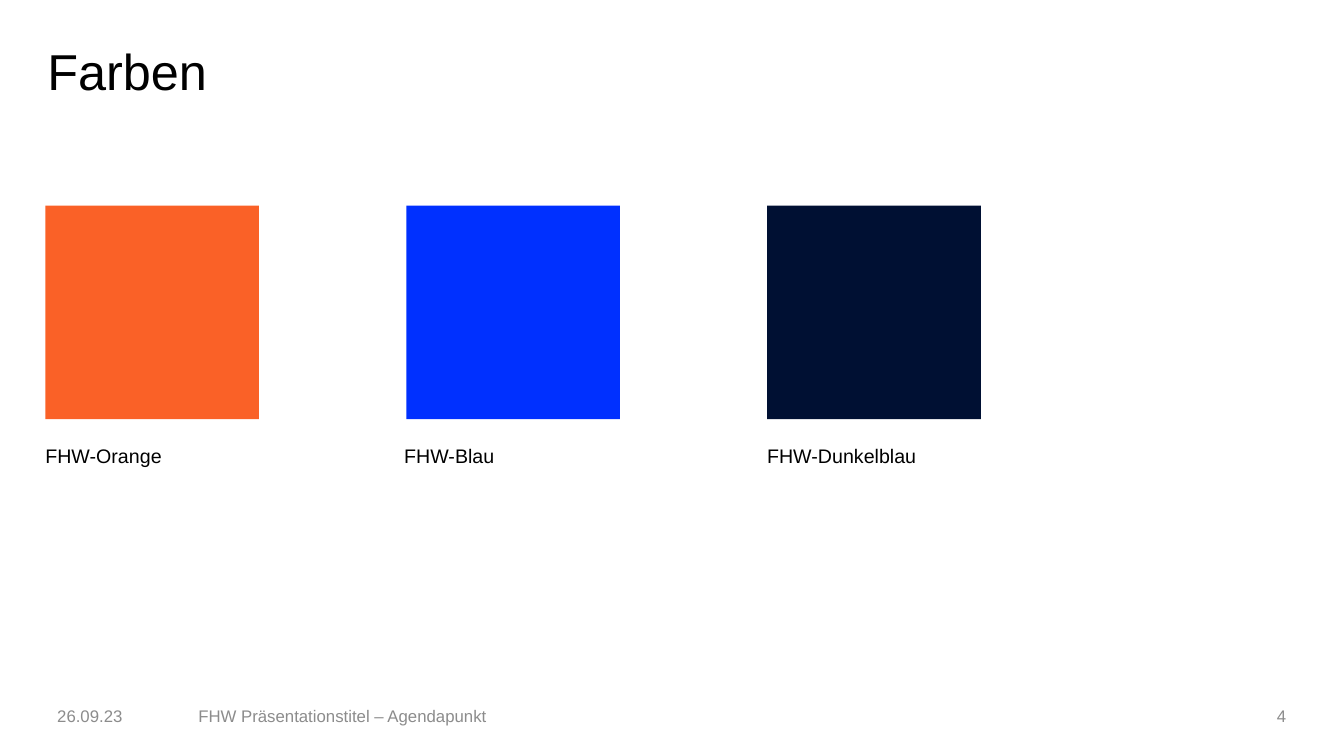
from pptx import Presentation
from pptx.dml.color import RGBColor
from pptx.enum.shapes import MSO_SHAPE
from pptx.enum.text import MSO_ANCHOR, MSO_AUTO_SIZE, PP_ALIGN
from pptx.util import Pt

BLACK = RGBColor(0x00, 0x00, 0x00)
GREY = RGBColor(0x8C, 0x8C, 0x8C)
ORANGE = RGBColor(0xFA, 0x61, 0x27)
BLUE = RGBColor(0x00, 0x30, 0xFF)
DARK_BLUE = RGBColor(0x00, 0x10, 0x33)

SWATCH_LEFT, SWATCH_TOP, SWATCH_SIZE, SWATCH_PITCH = 32.4, 146.9, 152.6, 257.8
LABEL_TOP, LABEL_HEIGHT = 316.8, 17
FOOTER_TOP, FOOTER_HEIGHT = 500.4, 28.8

# colour, label, label left, label width
SWATCHES = [
    (ORANGE, "FHW-Orange", 32.4, 83.5),
    (BLUE, "FHW-Blau", 288.7, 64.8),
    (DARK_BLUE, "FHW-Dunkelblau", 547.9, 107.3),
]

# text, left, width, alignment
FOOTERS = [
    ("26.09.23", 33.8, 84.2, PP_ALIGN.LEFT),
    ("FHW Präsentationstitel – Agendapunkt", 134.6, 709.9, PP_ALIGN.LEFT),
    ("4", 863.3, 62.6, PP_ALIGN.RIGHT),
]


class SlideBuilder:
    font_name = "Arial"

    def __init__(self, slide):
        self.slide = slide

    def set_text(self, shape, text, size, color, alignment=PP_ALIGN.LEFT):
        """Fill a shape with one top-anchored paragraph and return its text frame."""
        frame = shape.text_frame
        frame.text = text
        frame.vertical_anchor = MSO_ANCHOR.TOP
        frame.auto_size = MSO_AUTO_SIZE.NONE
        frame.word_wrap = True
        paragraph = frame.paragraphs[0]
        paragraph.alignment = alignment
        paragraph.font.name = self.font_name
        paragraph.font.size = Pt(size)
        paragraph.font.color.rgb = color
        return frame

    def clear_margins(self, frame):
        frame.margin_left = frame.margin_right = Pt(0)
        frame.margin_top = frame.margin_bottom = Pt(0)

    def title(self, text, left, top, width, height):
        shape = self.slide.shapes.title
        shape.left, shape.top = Pt(left), Pt(top)
        shape.width, shape.height = Pt(width), Pt(height)
        frame = self.set_text(shape, text, 36, BLACK)
        self.clear_margins(frame)
        frame.paragraphs[0].line_spacing = 0.9

    def swatch(self, left, top, size, color):
        shape = self.slide.shapes.add_shape(
            MSO_SHAPE.RECTANGLE, Pt(left), Pt(top), Pt(size), Pt(size))
        shape.shadow.inherit = False
        shape.fill.solid()
        shape.fill.fore_color.rgb = color
        shape.line.fill.background()

    def label(self, text, left, top, width, height):
        shape = self.slide.shapes.add_textbox(Pt(left), Pt(top), Pt(width), Pt(height))
        frame = self.set_text(shape, text, 14, BLACK)
        self.clear_margins(frame)
        frame.word_wrap = False
        frame.auto_size = MSO_AUTO_SIZE.SHAPE_TO_FIT_TEXT

    def footer(self, text, left, width, alignment):
        shape = self.slide.shapes.add_textbox(
            Pt(left), Pt(FOOTER_TOP), Pt(width), Pt(FOOTER_HEIGHT))
        self.set_text(shape, text, 12, GREY, alignment)


def main():
    presentation = Presentation()
    presentation.slide_width, presentation.slide_height = Pt(960), Pt(540)
    title_only = presentation.slide_layouts[5]
    builder = SlideBuilder(presentation.slides.add_slide(title_only))

    builder.title("Farben", 33.8, 33.8, 445.7, 56.9)
    for index, (color, name, label_left, label_width) in enumerate(SWATCHES):
        builder.swatch(SWATCH_LEFT + index * SWATCH_PITCH, SWATCH_TOP, SWATCH_SIZE, color)
        builder.label(name, label_left, LABEL_TOP, label_width, LABEL_HEIGHT)
    for text, left, width, alignment in FOOTERS:
        builder.footer(text, left, width, alignment)

    presentation.save("out.pptx")


if __name__ == "__main__":
    main()
